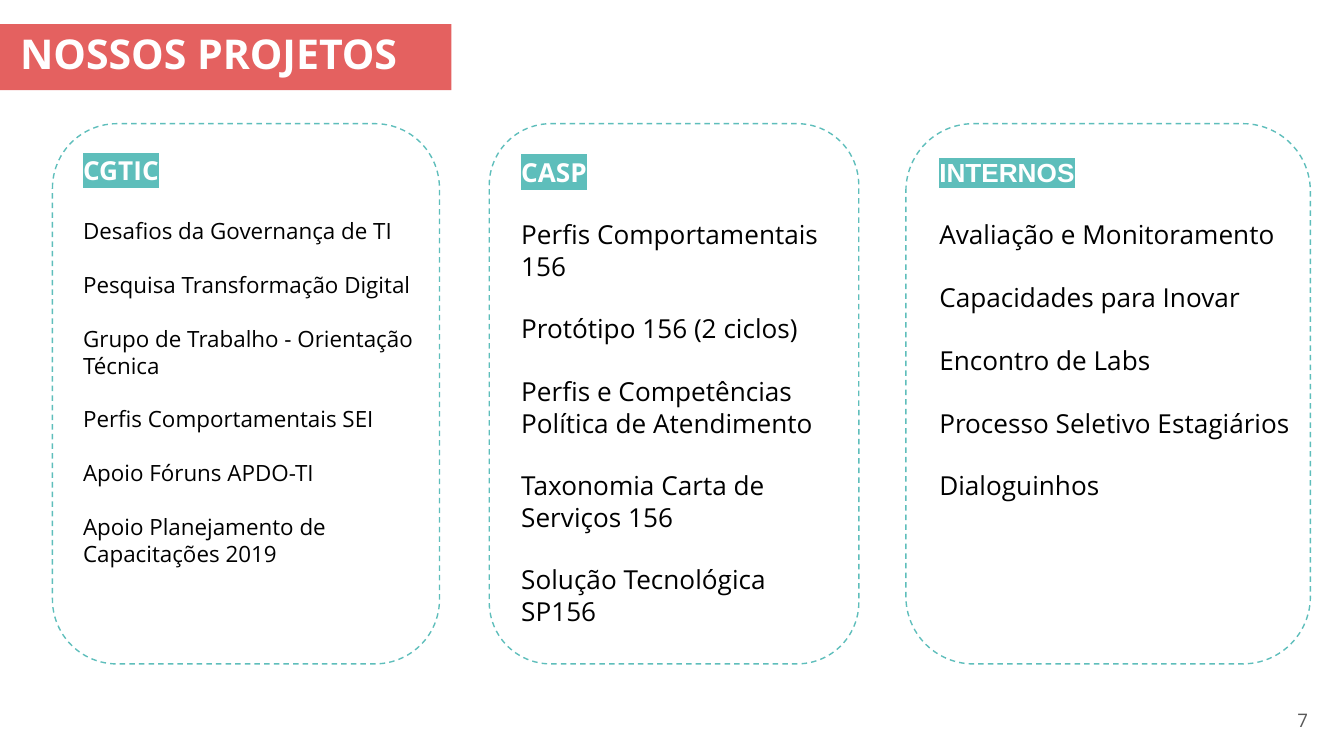
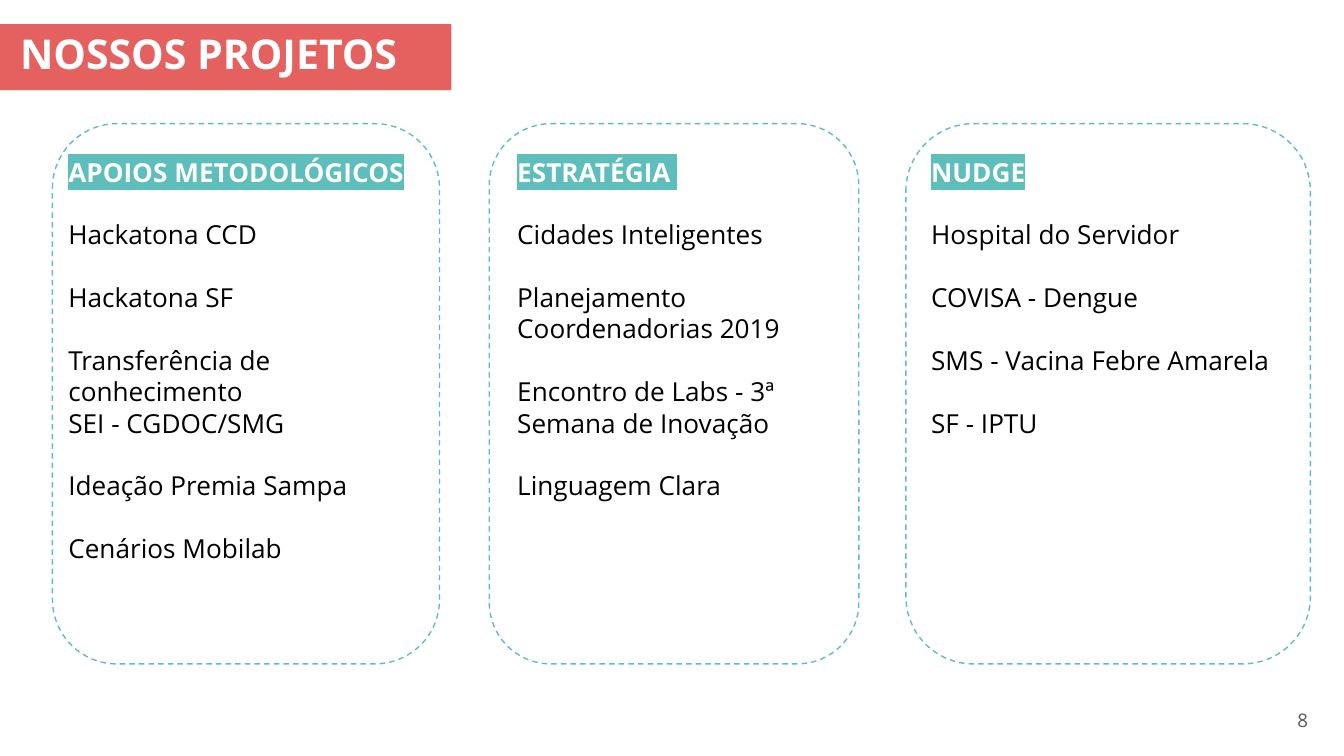
"""Builds two slides that list the lab's projects in three dashed cards each."""
from lxml.etree import SubElement
from pptx import Presentation
from pptx.dml.color import RGBColor
from pptx.enum.dml import MSO_LINE
from pptx.enum.shapes import MSO_SHAPE as Shape
from pptx.enum.text import MSO_ANCHOR as Anchor, PP_ALIGN as Align
from pptx.oxml.ns import qn
from pptx.util import Inches, Pt

CORAL, TEAL, WHITE, BLACK, GRAY = "E46160", "5EBEBB", "FFFFFF", "000000", "595959"
FONT = "Open Sans"
TITLE = "NOSSOS PROJETOS"
WIDTH = 10
HEIGHT = WIDTH * 9 / 16
CARD_TOP, CARD_HEIGHT = 0.92, 4.02
CARDS = [(0.39, 2.88), (3.64, 2.75), (6.74, 3.01)]
HEADING_SIZE, LINE_HEIGHT = 14, 1.2

SLIDES = [
    (7, [
        dict(heading="CGTIC", indent=0.13, width=2.73, size=12, top=1.05, height=4.3, items=[
            "Desafios da Governança de TI",
            "Pesquisa Transformação Digital",
            "Grupo de Trabalho - Orientação Técnica",
            "Perfis Comportamentais SEI",
            "Apoio Fóruns APDO-TI",
            "Apoio Planejamento de Capacitações 2019"]),
        dict(heading="CASP", indent=0.14, width=2.6, items=[
            "Perfis Comportamentais 156",
            "Protótipo 156 (2 ciclos)",
            "Perfis e Competências Política de Atendimento",
            "Taxonomia Carta de Serviços 156",
            "Solução Tecnológica SP156"]),
        dict(heading="INTERNOS", indent=0.15, width=2.88, heading_font="Arial", items=[
            "Avaliação e Monitoramento",
            "Capacidades para Inovar",
            "Encontro de Labs",
            "Processo Seletivo Estagiários",
            "Dialoguinhos"]),
    ]),
    (8, [
        dict(heading="APOIOS METODOLÓGICOS", indent=0.02, width=2.75, items=[
            "Hackatona CCD",
            "Hackatona SF",
            "Transferência de conhecimento\nSEI - CGDOC/SMG",
            "Ideação Premia Sampa",
            "Cenários Mobilab"]),
        dict(heading="ESTRATÉGIA ", indent=0.11, width=2.88, items=[
            "Cidades Inteligentes",
            "Planejamento Coordenadorias 2019",
            "Encontro de Labs - 3ª Semana de Inovação",
            "Linguagem Clara"]),
        dict(heading="NUDGE", indent=0.09, width=3.08, items=[
            "Hospital do Servidor",
            "COVISA - Dengue",
            "SMS - Vacina Febre Amarela",
            "SF - IPTU"]),
    ]),
]


def color(value):
    return RGBColor.from_string(value)


def add_shape(page, kind, *place, fill=None, line=None):
    shape = page.shapes.add_shape(kind, *map(Inches, place))
    shape.shadow.inherit = False
    if fill:
        shape.fill.solid()
        shape.fill.fore_color.rgb = color(fill)
    else:
        shape.fill.background()
    if line:
        shape.line.color.rgb = color(line)
        shape.line.width = Pt(0.75)
        shape.line.dash_style = MSO_LINE.DASH
    else:
        shape.line.fill.background()


def add_text_frame(page, *place, margins=(0.1, 0.1)):
    frame = page.shapes.add_textbox(*map(Inches, place)).text_frame
    frame.word_wrap = True
    frame.margin_left = frame.margin_right = Inches(margins[0])
    frame.margin_top = frame.margin_bottom = Inches(margins[1])
    return frame


def add_span(para, text, size, ink, bold=False, font=FONT, highlight=None):
    span = para.add_run()
    span.text = text
    span.font.size = Pt(size)
    span.font.bold = bold
    span.font.color.rgb = color(ink)
    if highlight:
        mark = SubElement(span.font._element, qn("a:highlight"))
        SubElement(mark, qn("a:srgbClr")).set("val", highlight)
    span.font.name = font


def add_list(page, left, heading, indent, width, items, size=14, top=1.06, height=3.51,
             heading_font=FONT):
    frame = add_text_frame(page, left + indent, top, width, height)
    add_span(frame.paragraphs[0], heading, HEADING_SIZE, WHITE, True, heading_font, TEAL)
    gap = HEADING_SIZE * LINE_HEIGHT
    for item in items:
        for line in item.split("\n"):
            para = frame.add_paragraph()
            para.space_before = Pt(gap)
            add_span(para, line, size, BLACK)
            gap = 0
        gap = size * LINE_HEIGHT


def add_page(deck, number, lists):
    page = deck.slides.add_slide(deck.slide_layouts[6])
    add_shape(page, Shape.RECTANGLE, -0.04, 0.18, 3.4, 0.49, fill=CORAL)
    for (left, card_width), project_list in zip(CARDS, lists):
        add_shape(page, Shape.ROUNDED_RECTANGLE, left, CARD_TOP, card_width, CARD_HEIGHT, line=TEAL)
        add_list(page, left, **project_list)
    title = add_text_frame(page, 0.08, 0.17, 3.01, 0.75, margins=(0.07, 0.04))
    add_span(title.paragraphs[0], TITLE, 22, WHITE, True)
    footer = add_text_frame(page, 7.5, 5.21, 2.33, 0.3)
    footer.vertical_anchor = Anchor.MIDDLE
    footer.paragraphs[0].alignment = Align.RIGHT
    add_span(footer.paragraphs[0], str(number), 10, GRAY)


def main():
    deck = Presentation()
    deck.slide_width, deck.slide_height = Inches(WIDTH), Inches(HEIGHT)
    for number, lists in SLIDES:
        add_page(deck, number, lists)
    deck.save("out.pptx")


if __name__ == "__main__":
    main()
